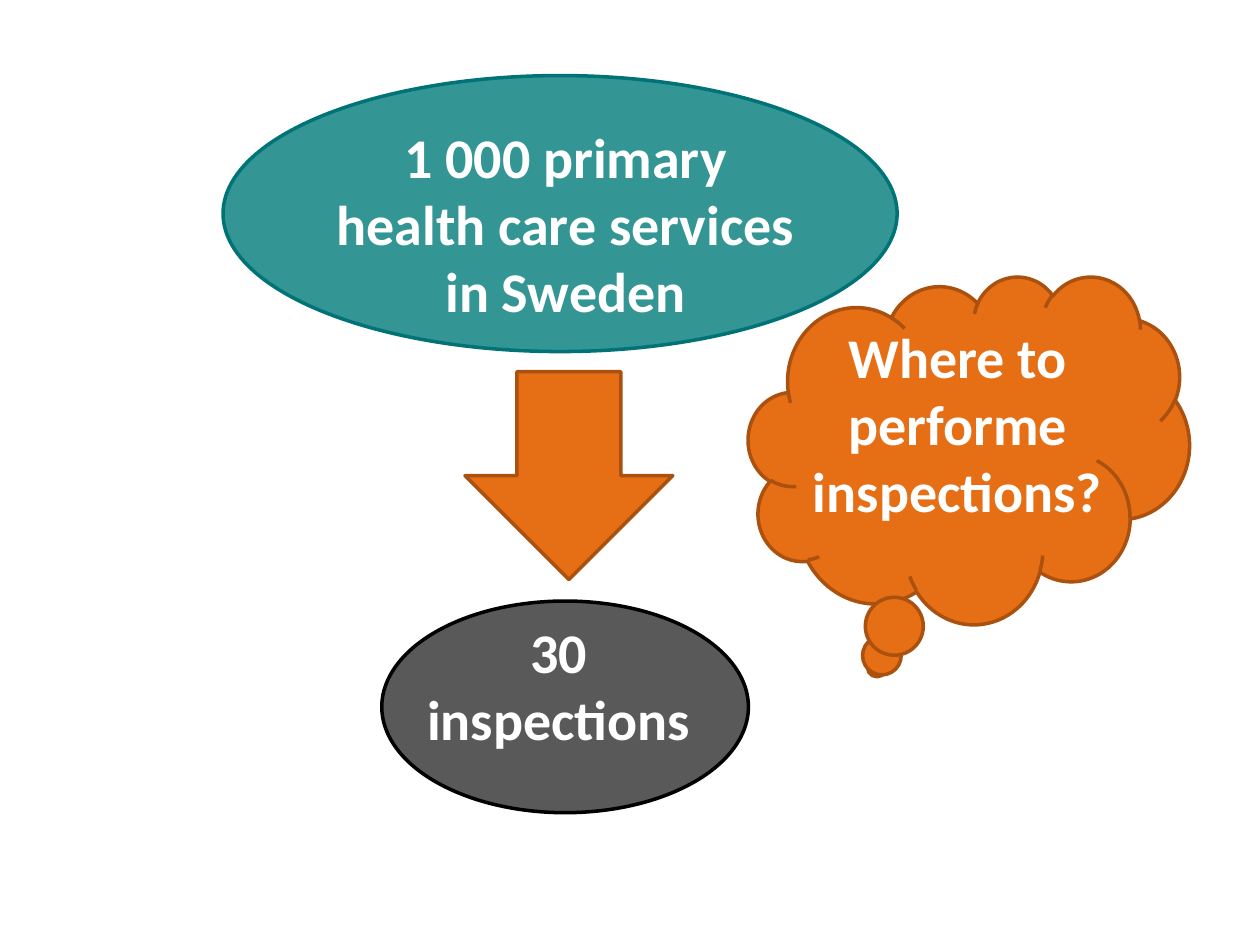
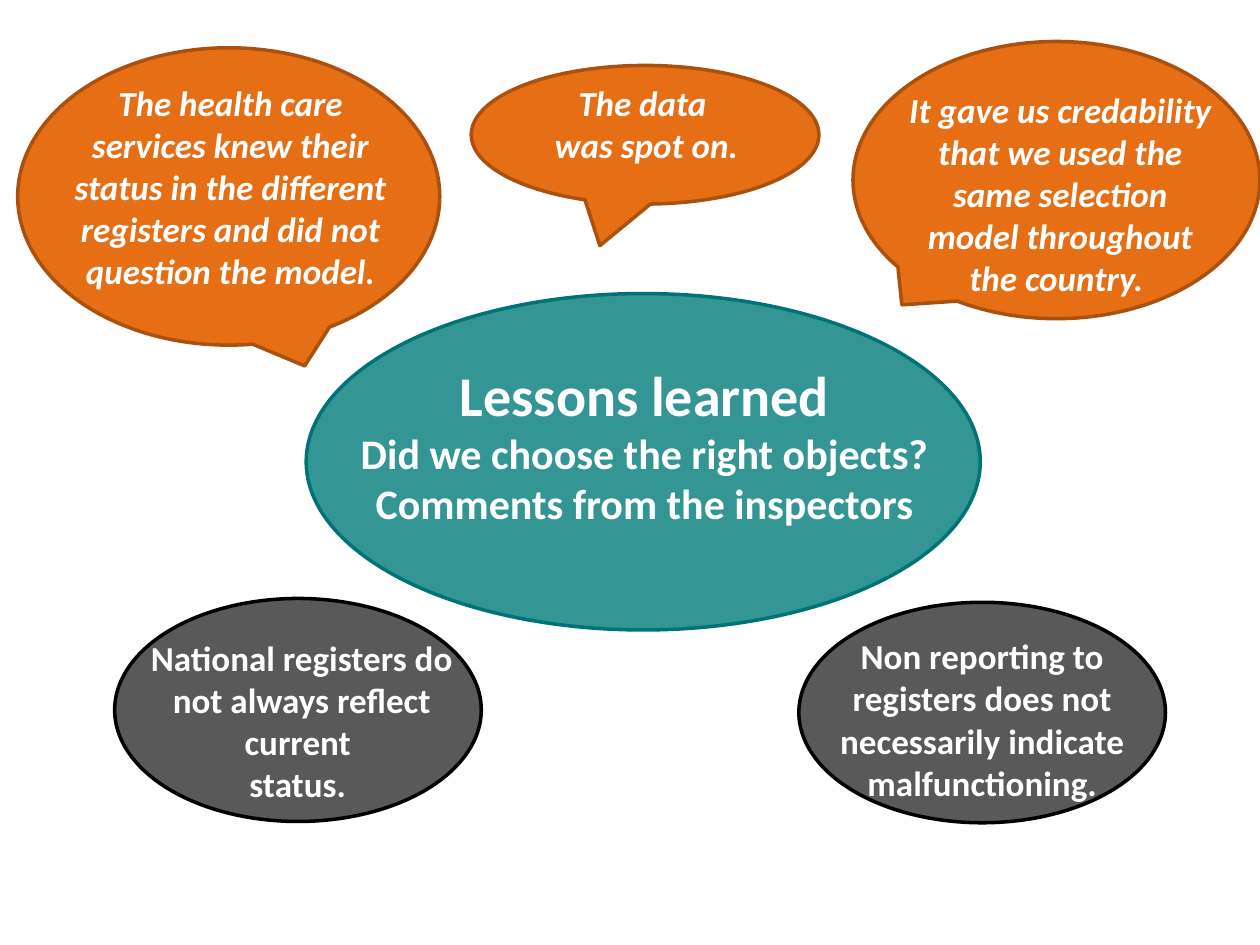
from dataclasses import dataclass

from pptx import Presentation
from pptx.dml.color import RGBColor
from pptx.enum.shapes import MSO_SHAPE
from pptx.enum.text import PP_ALIGN
from pptx.util import Emu, Pt

PX = 9144  # EMU per px, 100 px to the inch
FONT = "Calibri"
WHITE = "FFFFFF"
LARGE, MEDIUM, SMALL = 32, 24, 20

Box = tuple[int, int, int, int]


@dataclass(frozen=True)
class Style:
    fill: str
    line: str


TEAL = Style("349694", "007377")
ORANGE = Style("E66E14", "AA510F")
GREY = Style("595959", "000000")


@dataclass(frozen=True)
class Label:
    box: Box
    lines: tuple[tuple[str, int], ...]
    italic: bool = False


@dataclass(frozen=True)
class Figure:
    kind: MSO_SHAPE
    style: Style
    box: Box
    label: Label | None = None
    tail: tuple[float, ...] = ()


def px(n: int) -> Emu:
    return Emu(n * PX)


def rgb(value: str) -> RGBColor:
    return RGBColor.from_string(value)


def add_label(s, label: Label) -> None:
    tf = s.shapes.add_textbox(*map(px, label.box)).text_frame
    tf.word_wrap = True
    for i, (text, size) in enumerate(label.lines):
        p = tf.add_paragraph() if i else tf.paragraphs[0]
        p.text = text
        p.alignment = PP_ALIGN.CENTER
        for r in p.runs:
            r.font.name = FONT
            r.font.size = Pt(size)
            r.font.bold = True
            if label.italic:
                r.font.italic = True
            r.font.color.rgb = rgb(WHITE)


def add_figure(s, figure: Figure) -> None:
    sp = s.shapes.add_shape(figure.kind, *map(px, figure.box))
    sp.shadow.inherit = False
    sp.fill.solid()
    sp.fill.fore_color.rgb = rgb(figure.style.fill)
    sp.line.color.rgb = rgb(figure.style.line)
    sp.line.width = Pt(2)
    for i, value in enumerate(figure.tail):
        sp.adjustments[i] = value
    if figure.label:
        add_label(s, figure.label)


def ellipse(style: Style, box: Box, label: Label) -> Figure:
    return Figure(MSO_SHAPE.OVAL, style, box, label)


def quote(box: Box, text_box: Box, text: str, tail: tuple[float, float]) -> Figure:
    """Speech bubble holding an inspector's comment."""
    label = Label(text_box, ((text, SMALL),), italic=True)
    return Figure(MSO_SHAPE.OVAL_CALLOUT, ORANGE, box, label, tail)


SELECTION = (
    ellipse(TEAL, (177, 60, 535, 219), Label(
        (248, 92, 402, 172),
        (("1 000 primary health care services in Sweden", LARGE),))),
    ellipse(GREY, (303, 477, 291, 168), Label(
        (303, 485, 291, 118), (("30 \ninspections ", LARGE),))),
    Figure(MSO_SHAPE.CLOUD_CALLOUT, ORANGE, (594, 219, 350, 276), Label(
        (634, 251, 252, 172), (("Where to performe inspections?", LARGE),))),
    Figure(MSO_SHAPE.DOWN_ARROW, ORANGE, (369, 295, 165, 165)),
)

LESSONS = (
    ellipse(TEAL, (243, 233, 535, 267), Label(
        (244, 281, 535, 145),
        (("Lessons learned", LARGE),
         ("Did we choose the right objects?", MEDIUM),
         ("Comments from the inspectors", MEDIUM)))),
    quote((677, 33, 323, 220), (709, 65, 265, 178),
          "It gave us credability that we used the same selection model "
          "throughout the country. ", (-0.38, 0.45)),
    quote((374, 52, 276, 110), (387, 60, 252, 77),
          "The data \nwas spot on.", (-0.13, 0.8)),
    quote((14, 38, 335, 236), (45, 60, 276, 178),
          "The health care services knew their status in the different "
          "registers and did not question the model.", (0.18, 0.57)),
    ellipse(GREY, (91, 475, 291, 177), Label(
        (98, 500, 283, 145),
        (("National registers do not always reflect current \nstatus. ", SMALL),))),
    ellipse(GREY, (634, 478, 291, 175), Label(
        (634, 499, 291, 178),
        (("Non reporting to registers does not necessarily indicate "
          "malfunctioning.", SMALL),))),
)


def main() -> None:
    prs = Presentation()
    prs.slide_width, prs.slide_height = px(1000), px(750)
    for figures in (SELECTION, LESSONS):
        s = prs.slides.add_slide(prs.slide_layouts[6])
        for figure in figures:
            add_figure(s, figure)
    prs.save("out.pptx")


if __name__ == "__main__":
    main()
